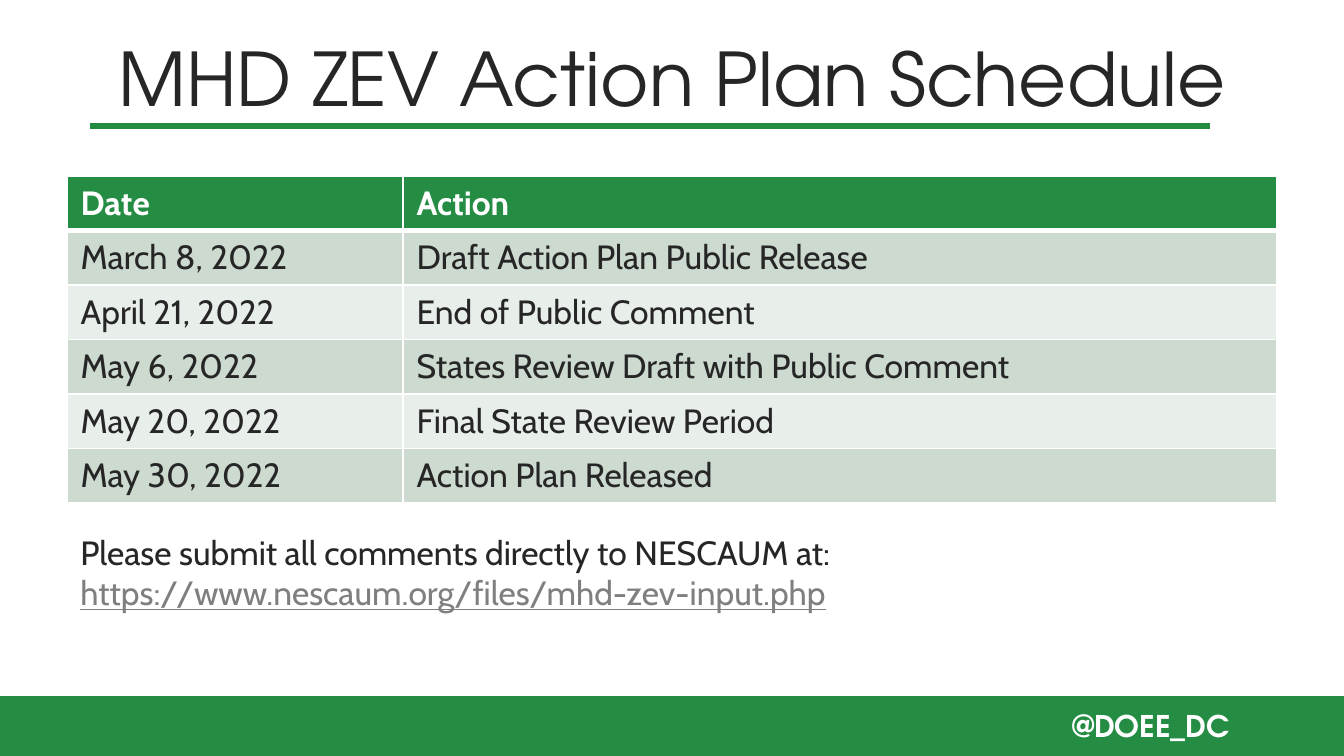
"""Build the MHD ZEV Action Plan schedule slide."""
from dataclasses import dataclass

from lxml import etree
from pptx import Presentation
from pptx.dml.color import RGBColor
from pptx.enum.shapes import MSO_CONNECTOR, MSO_SHAPE
from pptx.enum.text import MSO_ANCHOR, PP_ALIGN
from pptx.oxml.ns import qn
from pptx.util import Inches, Pt

RECTANGLE, STRAIGHT = MSO_SHAPE.RECTANGLE, MSO_CONNECTOR.STRAIGHT
LEFT, CENTER, RIGHT = PP_ALIGN.LEFT, PP_ALIGN.CENTER, PP_ALIGN.RIGHT
TOP, MIDDLE = MSO_ANCHOR.TOP, MSO_ANCHOR.MIDDLE

TITLE = "MHD ZEV Action Plan Schedule"
HANDLE = "@DOEE_DC"
SCHEDULE = [
    ("Date", "Action"),
    ("March 8, 2022", "Draft Action Plan Public Release"),
    ("April 21, 2022", "End of Public Comment"),
    ("May 6, 2022", "States Review Draft with Public Comment"),
    ("May 20, 2022", "Final State Review Period"),
    ("May 30, 2022", "Action Plan Released"),
]
COMMENTS = [
    "Please submit all comments directly to NESCAUM at:",
    "https://www.nescaum.org/files/mhd-zev-input.php",
]


@dataclass(frozen=True)
class Theme:
    """Hold the fonts, sizes and colours of the slide."""
    heading_font: str = "TeX Gyre Adventor"
    body_font: str = "Cabin"
    title_size: float = 39.6
    body_size: float = 18
    handle_size: float = 16
    green: str = "248C43"
    rule: str = "218B40"
    bands: tuple = ("CDDACF", "E8EEE9")
    ink: str = "262626"
    link: str = "7F7F7F"
    white: str = "FFFFFF"


THEME = Theme()
WIDTH = 10
HEIGHT = WIDTH * 9 / 16
MARGIN, CONTENT_WIDTH = 0.5, 9
BAND_TOP = 5.18
TABLE_TOP, TABLE_HEIGHT = 1.31, 2.43
COLUMN_WIDTHS = (2.5, 6.5)
ROW_POINTS = 29.2


def paint(fill, color):
    """Give a fill one solid colour."""
    fill.solid()
    fill.fore_color.rgb = RGBColor.from_string(color)


def style(para, font, size, color, bold=False, align=LEFT):
    """Format a paragraph and its runs."""
    para.alignment = align
    for span in para.runs:
        span.font.name = font
        span.font.size = Pt(size)
        span.font.bold = bold
        span.font.color.rgb = RGBColor.from_string(color)


def add_text(page, area, lines, font, size, color, bold=False, align=LEFT, anchor=TOP):
    """Add a wrapped text box and return its paragraphs."""
    box = page.shapes.add_textbox(*map(Inches, area))
    frame = box.text_frame
    frame.word_wrap = True
    frame.vertical_anchor = anchor
    frame.text = "\n".join(lines)
    for para in frame.paragraphs:
        style(para, font, size, color, bold, align)
    return frame.paragraphs


def set_borders(cell, widths, color):
    """Draw the left, right, top and bottom borders of a cell."""
    properties = cell._tc.get_or_add_tcPr()
    for index, (side, width) in enumerate(zip("LRTB", widths)):
        line = etree.Element(qn(f"a:ln{side}"), w=str(Pt(width)))
        solid = etree.SubElement(line, qn("a:solidFill"))
        etree.SubElement(solid, qn("a:srgbClr"), val=color)
        properties.insert(index, line)


def add_band(page):
    """Add the footer band with the handle."""
    band = page.shapes.add_shape(
        RECTANGLE, 0, Inches(BAND_TOP), Inches(WIDTH), Inches(HEIGHT - BAND_TOP))
    band.shadow.inherit = False
    paint(band.fill, THEME.green)
    band.line.fill.background()
    add_text(page, (7.75, 5.22, 1.5, 0.37), [HANDLE], THEME.heading_font,
             THEME.handle_size, THEME.white, bold=True, align=RIGHT)


def add_title(page):
    """Add the title and the rule below it."""
    rule = page.shapes.add_connector(STRAIGHT, *map(Inches, (0.67, 0.94, 9, 0.94)))
    rule.line.color.rgb = RGBColor.from_string(THEME.rule)
    rule.line.width = Pt(3)
    etree.SubElement(rule._element.spPr, qn("a:effectLst"))
    add_text(page, (MARGIN, 0.1, CONTENT_WIDTH, 0.94), [TITLE], THEME.heading_font,
             THEME.title_size, THEME.ink, align=CENTER, anchor=MIDDLE)


def add_schedule(page):
    """Add the banded schedule table."""
    area = (MARGIN, TABLE_TOP, CONTENT_WIDTH, TABLE_HEIGHT)
    table = page.shapes.add_table(
        len(SCHEDULE), len(COLUMN_WIDTHS), *map(Inches, area)).table
    for column, width in zip(table.columns, COLUMN_WIDTHS):
        column.width = Inches(width)
    for row, entries in enumerate(SCHEDULE):
        table.rows[row].height = Pt(ROW_POINTS)
        header = row == 0
        fill = THEME.green if header else THEME.bands[(row - 1) % 2]
        color = THEME.white if header else THEME.ink
        widths = (1, 1, 3 if row == 1 else 1, 3 if header else 1)
        for column, entry in enumerate(entries):
            cell = table.cell(row, column)
            cell.text = entry
            style(cell.text_frame.paragraphs[0], THEME.body_font, THEME.body_size,
                  color, bold=header)
            paint(cell.fill, fill)
            set_borders(cell, widths, THEME.white)


def add_comments(page):
    """Add the note on where to send comments."""
    address = add_text(page, (MARGIN, 3.91, CONTENT_WIDTH, 0.71), COMMENTS,
                       THEME.body_font, THEME.body_size, THEME.ink)[-1]
    for span in address.runs:
        span.font.underline = True
        span.font.color.rgb = RGBColor.from_string(THEME.link)


def main():
    """Assemble and save the deck."""
    deck = Presentation()
    deck.slide_width, deck.slide_height = Inches(WIDTH), Inches(HEIGHT)
    page = deck.slides.add_slide(deck.slide_layouts[6])
    paint(page.background.fill, THEME.white)
    add_band(page)
    add_title(page)
    add_schedule(page)
    add_comments(page)
    deck.save("out.pptx")


if __name__ == "__main__":
    main()
